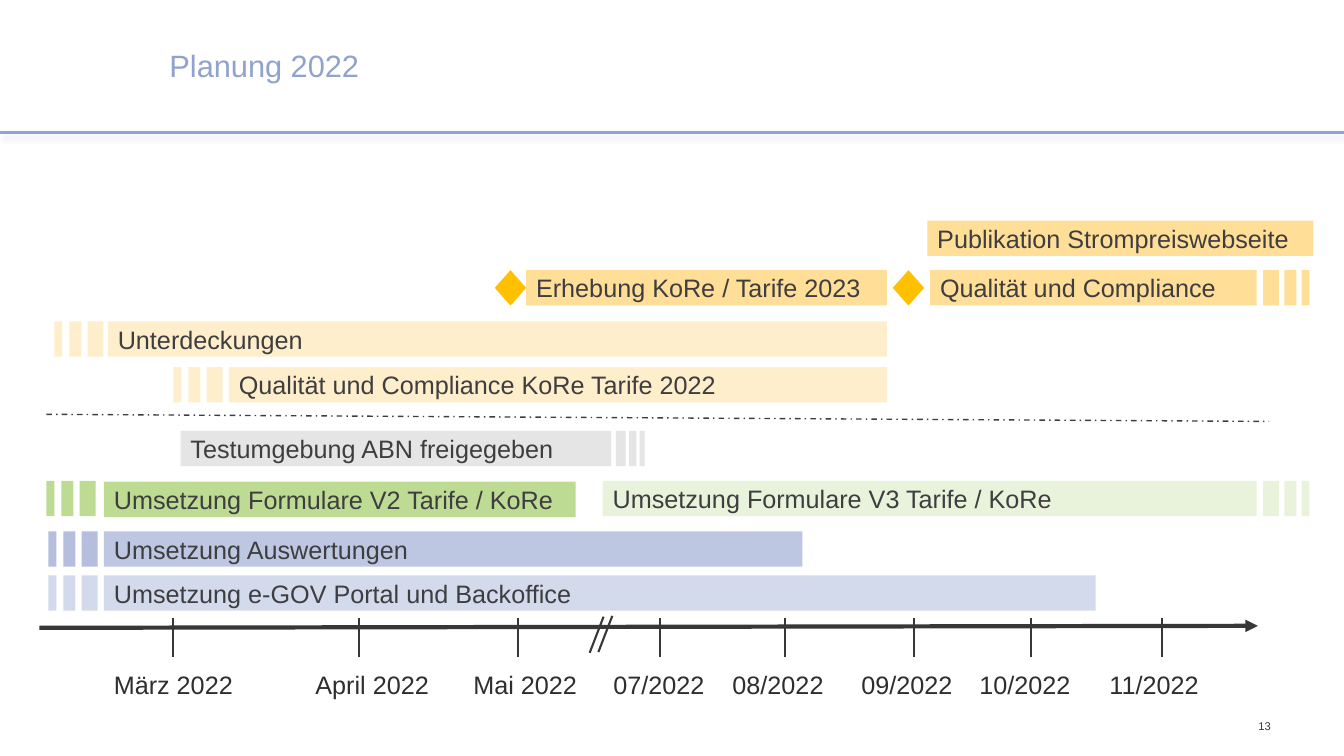
"""Build the slide 'Planung 2022' with its timeline of work packages."""
import pptx
import pptx.dml.color
import pptx.enum.dml
import pptx.enum.shapes
import pptx.enum.text
import pptx.oxml
import pptx.oxml.ns
import pptx.util

Cm = pptx.util.Cm
Pt = pptx.util.Pt
SHAPE = pptx.enum.shapes.MSO_SHAPE
ALIGN = pptx.enum.text.PP_ALIGN
MIDDLE = pptx.enum.text.MSO_ANCHOR.MIDDLE
SLIDE_WIDTH = 33.87
BAR_HEIGHT = 0.89
STRIPES_BEFORE = [(0, 0.2), (0.38, 0.3), (0.84, 0.4)]
STRIPES_AFTER = [(0, 0.4), (0.54, 0.3), (0.97, 0.2)]
COLOURS = {
    "title": "92A2CE", "axis": "373737", "month": "2E2E30", "text": "3E3D40",
    "milestone": "FFC000", "amber": "FFDE97", "cream": "FFEECB",
    "grey": "E5E5E5", "green": "BDDB92", "mint": "E9F3DB",
    "blue": "BEC7E2", "blue_stripe": "B5BEDD", "pale_blue": "D3DAEB",
}
BARS = [
    ("Publikation Strompreiswebseite", 23.37, 5.56, 9.73, "amber"),
    ("Erhebung KoRe / Tarife 2023", 13.26, 6.81, 9.09, "amber"),
    ("Qualität und Compliance", 23.44, 6.81, 8.23, "amber"),
    ("Unterdeckungen", 2.72, 8.1, 19.63, "cream"),
    ("Qualität und Compliance KoRe Tarife 2022", 5.77, 9.25, 16.59, "cream"),
    ("Testumgebung ABN freigegeben", 4.55, 10.86, 10.85, "grey"),
    ("Umsetzung Formulare V2 Tarife / KoRe", 2.62, 12.14, 11.89, "green"),
    ("Umsetzung Formulare V3 Tarife / KoRe", 15.19, 12.12, 16.48, "mint"),
    ("Umsetzung Auswertungen", 2.62, 13.39, 17.6, "blue"),
    ("Umsetzung e-GOV Portal und Backoffice", 2.62, 14.5, 24.99, "pale_blue"),
]
FADES = [
    (1.37, 8.1, "cream", STRIPES_BEFORE, 1),
    (4.37, 9.25, "cream", STRIPES_BEFORE, 1),
    (1.17, 12.12, "green", STRIPES_BEFORE, 1),
    (1.22, 13.39, "blue_stripe", STRIPES_BEFORE, 1),
    (1.22, 14.5, "pale_blue", STRIPES_BEFORE, 1),
    (31.83, 6.81, "amber", STRIPES_AFTER, 1),
    (31.83, 12.12, "mint", STRIPES_AFTER, 1),
    (15.52, 10.86, "grey", STRIPES_AFTER, 0.62),
]
MONTHS = [
    ("März 2022", 4.37, 2.62, 3.53), ("April 2022", 9.04, 7.7, 3.4),
    ("Mai 2022", 13.06, 11.68, 3.15), ("07/2022", 16.64, 15.21, 2.82),
    ("08/2022", 19.79, 18.21, 2.82), ("09/2022", 23.04, 21.46, 2.82),
    ("10/2022", 25.98, 24.43, 2.82), ("11/2022", 29.29, 27.71, 2.77),
]


def rgb(colour):
    """Return the named colour."""
    return pptx.dml.color.RGBColor.from_string(COLOURS[colour])


def write(frame, wording, size, colour, align=ALIGN.LEFT):
    """Write one run into the first paragraph of a text frame."""
    paragraph = frame.paragraphs[0]
    paragraph.alignment = align
    run = paragraph.add_run()
    run.text = wording
    run.font.name = "Arial"
    run.font.size = Pt(size)
    run.font.color.rgb = rgb(colour)


def add_block(slide, kind, left, top, width, colour):
    """Add a filled shape of bar height without outline."""
    block = slide.shapes.add_shape(kind, Cm(left), Cm(top), Cm(width), Cm(BAR_HEIGHT))
    block.shadow.inherit = False
    block.fill.solid()
    block.fill.fore_color.rgb = rgb(colour)
    block.line.fill.background()
    return block


def add_bar(slide, wording, left, top, width, colour):
    """Add a labelled bar for one work package."""
    frame = add_block(slide, SHAPE.RECTANGLE, left, top, width, colour).text_frame
    frame.word_wrap = True
    frame.vertical_anchor = MIDDLE
    write(frame, wording, 18, "text")


def add_fade(slide, left, top, colour, stripes, scale):
    """Add the stripes that let a bar fade out."""
    for offset, width in stripes:
        add_block(slide, SHAPE.RECTANGLE, left + offset * scale, top, width * scale, colour)


def add_line(slide, start, end, colour, weight):
    """Add a straight line without shadow."""
    line = slide.shapes.add_connector(
        pptx.enum.shapes.MSO_CONNECTOR.STRAIGHT, *map(Cm, start + end))
    line.line.color.rgb = rgb(colour)
    line.line.width = Pt(weight)
    pptx.oxml.parse_xml(
        f"<a:effectLst {pptx.oxml.ns.nsdecls('a')}/>")
    line._element.spPr.append(
        pptx.oxml.parse_xml(f"<a:effectLst {pptx.oxml.ns.nsdecls('a')}/>"))
    return line


def add_label(slide, wording, left, top, width, height, size, colour, align=ALIGN.LEFT):
    """Add a single-line text box."""
    frame = slide.shapes.add_textbox(Cm(left), Cm(top), Cm(width), Cm(height)).text_frame
    frame.word_wrap = False
    frame.vertical_anchor = MIDDLE
    write(frame, wording, size, colour, align)


def add_header(slide):
    """Format the title and add the shaded rule below it."""
    title = slide.shapes.title
    title.left, title.top, title.width, title.height = map(Cm, (4.27, 0.58, 28.02, 2.24))
    frame = title.text_frame
    frame.auto_size = pptx.enum.text.MSO_AUTO_SIZE.NONE
    frame.vertical_anchor = MIDDLE
    frame.margin_left = Cm(0)
    frame.paragraphs[0].line_spacing = 0.9
    write(frame, "Planung 2022", 22, "title")
    rule = add_line(slide, (0, 3.33), (SLIDE_WIDTH, 3.33), "title", 2)
    rule._element.spPr[-1].append(pptx.oxml.parse_xml(
        f'<a:outerShdw {pptx.oxml.ns.nsdecls("a")} blurRad="{Pt(4)}" dist="{Pt(3)}" '
        f'dir="{77 * 60000}" rotWithShape="0"><a:srgbClr val="{COLOURS["title"]}">'
        '<a:alpha val="30000"/></a:srgbClr></a:outerShdw>'))


def add_time_axis(slide):
    """Add the arrow with its month ticks, labels and break mark."""
    axis = add_line(slide, (0.99, 15.82), (31.7, 15.77), "axis", 3)
    axis.line._get_or_add_ln().append(pptx.oxml.parse_xml(
        f'<a:tailEnd {pptx.oxml.ns.nsdecls("a")} type="triangle"/>'))
    for month, tick, left, width in MONTHS:
        add_line(slide, (tick, 15.57), (tick, 16.56), "axis", 1.5)
        add_label(slide, month, left, 16.74, width, 1.02, 18, "month")
    for left, top in [(14.86, 15.54), (15.08, 15.52)]:
        add_line(slide, (left + 0.35, top), (left, top + 0.91), "axis", 1.5)


def main():
    """Build and save the slide."""
    deck = pptx.Presentation()
    deck.slide_width, deck.slide_height = Cm(SLIDE_WIDTH), Cm(19.05)
    slide = deck.slides.add_slide(deck.slide_layouts[5])
    add_header(slide)
    add_time_axis(slide)
    for bar in BARS:
        add_bar(slide, *bar)
    for fade in FADES:
        add_fade(slide, *fade)
    for left in (12.47, 22.5):
        add_block(slide, SHAPE.DIAMOND, left, 6.81, 0.79, "milestone")
    divider = add_line(slide, (1.17, 10.44), (31.98, 10.62), "text", 1)
    divider.line.dash_style = pptx.enum.dml.MSO_LINE.DASH_DOT
    add_label(slide, "13", 30.07, 17.93, 2.21, 0.74, 8, "axis", ALIGN.RIGHT)
    deck.save("out.pptx")


if __name__ == "__main__":
    main()
